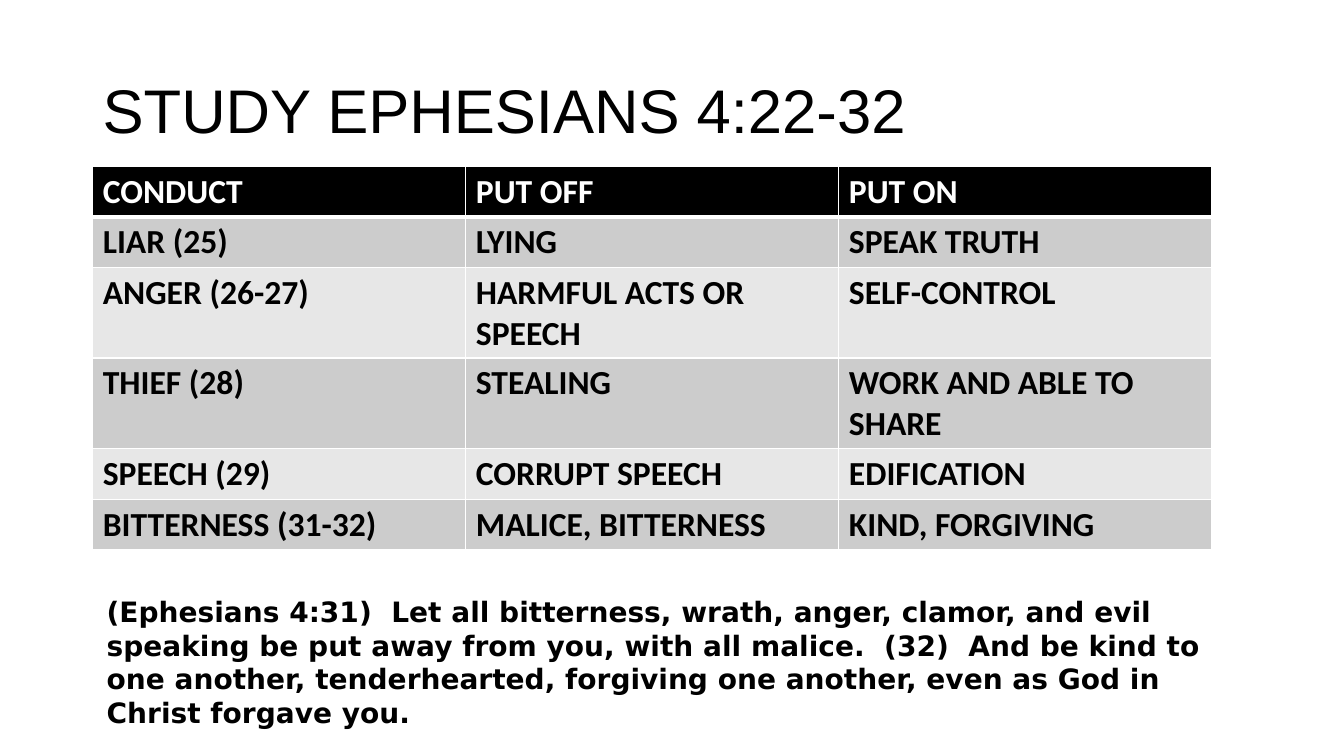
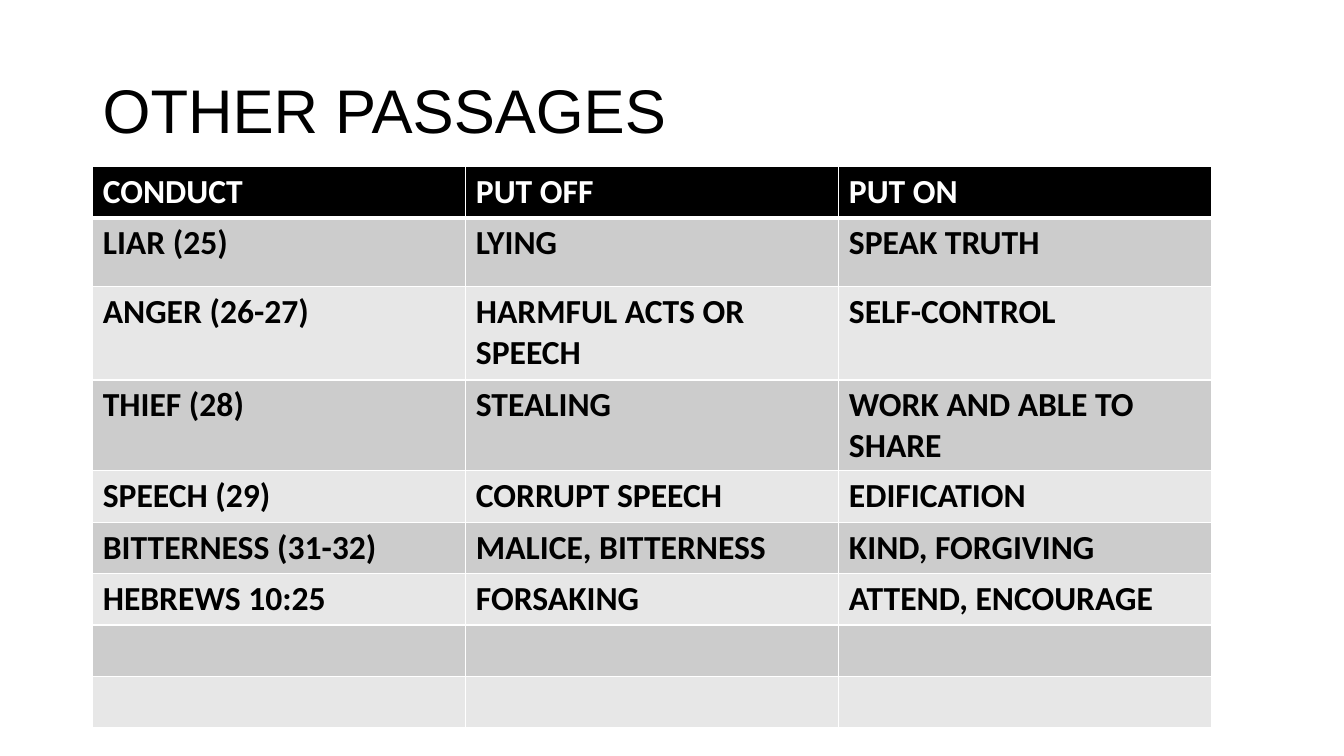
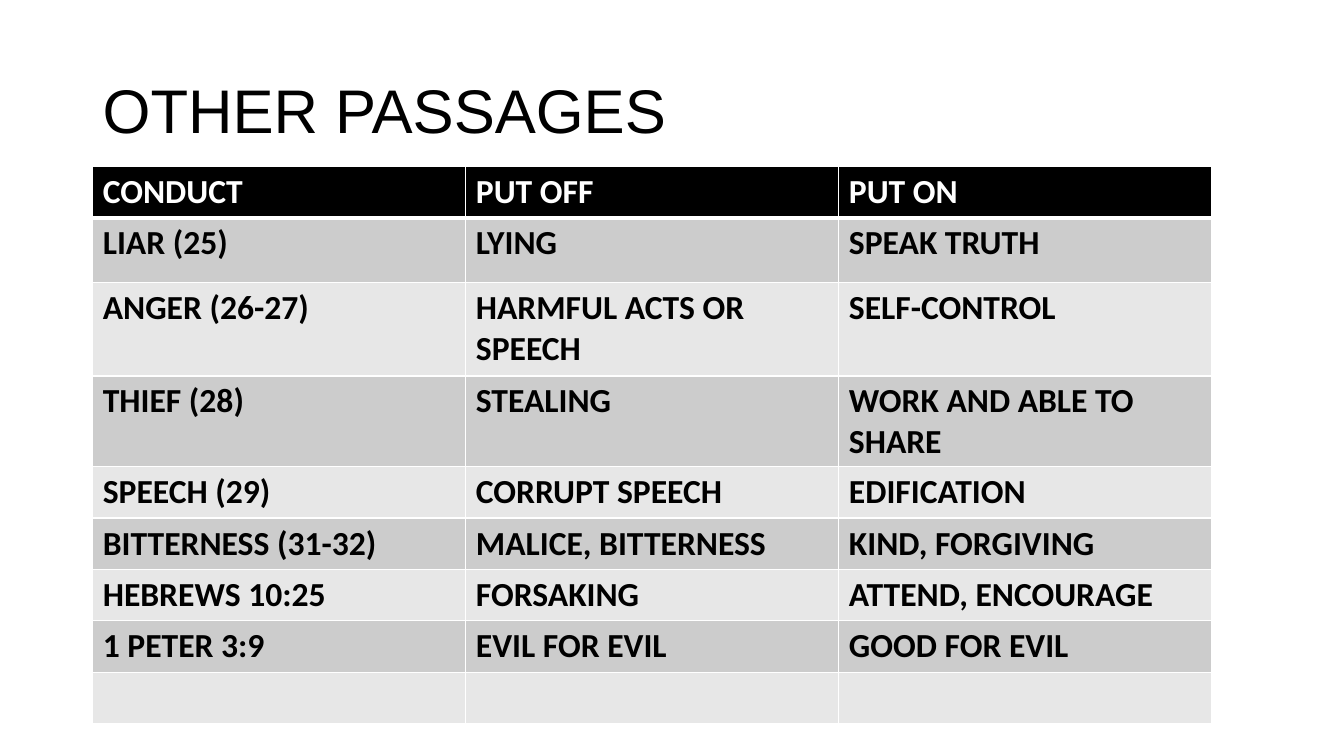
from dataclasses import dataclass

from lxml.etree import SubElement
from pptx import Presentation
from pptx.dml.color import RGBColor
from pptx.enum.text import MSO_ANCHOR, MSO_AUTO_SIZE
from pptx.oxml.ns import qn
from pptx.slide import Slide
from pptx.table import _Cell
from pptx.text.text import TextFrame
from pptx.util import Emu, Pt

EMU_PER_PX = 9144


@dataclass(frozen=True)
class TextStyle:
    font: str
    size: int
    color: str
    bold: bool


@dataclass(frozen=True)
class Theme:
    title: TextStyle = TextStyle("Arial", 44, "000000", False)
    header: TextStyle = TextStyle("Calibri", 24, "FFFFFF", True)
    body: TextStyle = TextStyle("Calibri", 24, "000000", True)
    verse: TextStyle = TextStyle("DejaVu Sans", 20, "000000", True)
    header_fill: str = "000000"
    bands: tuple[str, str] = ("CCCCCC", "E7E7E7")
    border: str = "FFFFFF"
    thin: int = 1
    thick: int = 3


@dataclass(frozen=True)
class Box:
    left: int
    top: int
    width: int
    height: int


@dataclass(frozen=True)
class Study:
    title: str
    rows: list[tuple[str, str, str]]
    row_heights: list[int]
    table_height: int
    verse: str = ""


THEME = Theme()
TITLE_BOX = Box(92, 40, 1150, 145)
VERSE_BOX = Box(96, 585, 1107, 145)
TABLE_LEFT, TABLE_TOP, COLUMN_WIDTH = 92, 165, 370

HEADINGS = ("CONDUCT", "PUT OFF", "PUT ON")
EPHESIANS = [
    ("LIAR (25)", "LYING", "SPEAK TRUTH"),
    ("ANGER (26-27)", "HARMFUL ACTS OR SPEECH", "SELF-CONTROL"),
    ("THIEF (28)", "STEALING", "WORK AND ABLE TO SHARE"),
    ("SPEECH (29)", "CORRUPT SPEECH", "EDIFICATION"),
    ("BITTERNESS (31-32)", "MALICE, BITTERNESS", "KIND, FORGIVING"),
]
HEBREWS = ("HEBREWS 10:25", "FORSAKING", "ATTEND, ENCOURAGE")
PETER = ("1 PETER 3:9", "EVIL FOR EVIL", "GOOD FOR EVIL")
UNFILLED = ("", "", "")
VERSE = (
    "(Ephesians 4:31)  Let all bitterness, wrath, anger, clamor, and evil speaking "
    "be put away from you, with all malice.  (32)  And be kind to one another, "
    "tenderhearted, forgiving one another, even as God in Christ forgave you."
)

STUDIES = [
    Study("STUDY EPHESIANS 4:22-32", EPHESIANS, [41] * 6, 380, VERSE),
    Study("OTHER PASSAGES", [*EPHESIANS, HEBREWS, UNFILLED, UNFILLED],
          [51, 68, 93, 80] + [51] * 5, 559),
    Study("OTHER PASSAGES", [*EPHESIANS, HEBREWS, PETER, UNFILLED],
          [51, 64, 93, 80] + [51] * 5, 555),
]


def px(length: int) -> Emu:
    return Emu(length * EMU_PER_PX)


def write(frame: TextFrame, text: str, style: TextStyle) -> None:
    frame.text = text
    for run in frame.paragraphs[0].runs:
        run.font.name = style.font
        run.font.size = Pt(style.size)
        run.font.bold = style.bold
        run.font.color.rgb = RGBColor.from_string(style.color)


def add_text(slide: Slide, box: Box, text: str, style: TextStyle) -> TextFrame:
    frame = slide.shapes.add_textbox(
        px(box.left), px(box.top), px(box.width), px(box.height)
    ).text_frame
    frame.word_wrap = True
    write(frame, text, style)
    return frame


def set_borders(cell: _Cell, top: int, bottom: int) -> None:
    properties = cell._tc.get_or_add_tcPr()
    widths = {"lnL": THEME.thin, "lnR": THEME.thin, "lnT": top, "lnB": bottom}
    for side, width in widths.items():
        line = SubElement(properties, qn(f"a:{side}"), w=str(Pt(width)))
        fill = SubElement(line, qn("a:solidFill"))
        SubElement(fill, qn("a:srgbClr"), val=THEME.border)


def add_conduct_table(slide: Slide, study: Study) -> None:
    rows = [HEADINGS, *study.rows]
    graphic = slide.shapes.add_table(
        len(rows), len(HEADINGS), px(TABLE_LEFT), px(TABLE_TOP),
        px(COLUMN_WIDTH * len(HEADINGS)), px(study.table_height),
    )
    table = graphic.table
    for row, height in zip(table.rows, study.row_heights):
        row.height = px(height)
    graphic.height = px(study.table_height)
    for index, texts in enumerate(rows):
        is_header = index == 0
        style = THEME.header if is_header else THEME.body
        band = THEME.header_fill if is_header else THEME.bands[(index - 1) % 2]
        top = THEME.thick if index == 1 else THEME.thin
        bottom = THEME.thick if is_header else THEME.thin
        for column, text in enumerate(texts):
            cell = table.cell(index, column)
            write(cell.text_frame, text, style)
            set_borders(cell, top, bottom)
            cell.fill.solid()
            cell.fill.fore_color.rgb = RGBColor.from_string(band)


def add_study(slide: Slide, study: Study) -> None:
    title = add_text(slide, TITLE_BOX, study.title, THEME.title)
    title.vertical_anchor = MSO_ANCHOR.MIDDLE
    title.paragraphs[0].line_spacing = 0.9
    add_conduct_table(slide, study)
    if study.verse:
        verse = add_text(slide, VERSE_BOX, study.verse, THEME.verse)
        verse.auto_size = MSO_AUTO_SIZE.SHAPE_TO_FIT_TEXT


def main() -> None:
    deck = Presentation()
    deck.slide_width, deck.slide_height = px(1333), px(750)
    blank = deck.slide_layouts[6]
    for study in STUDIES:
        add_study(deck.slides.add_slide(blank), study)
    deck.save("out.pptx")


if __name__ == "__main__":
    main()
